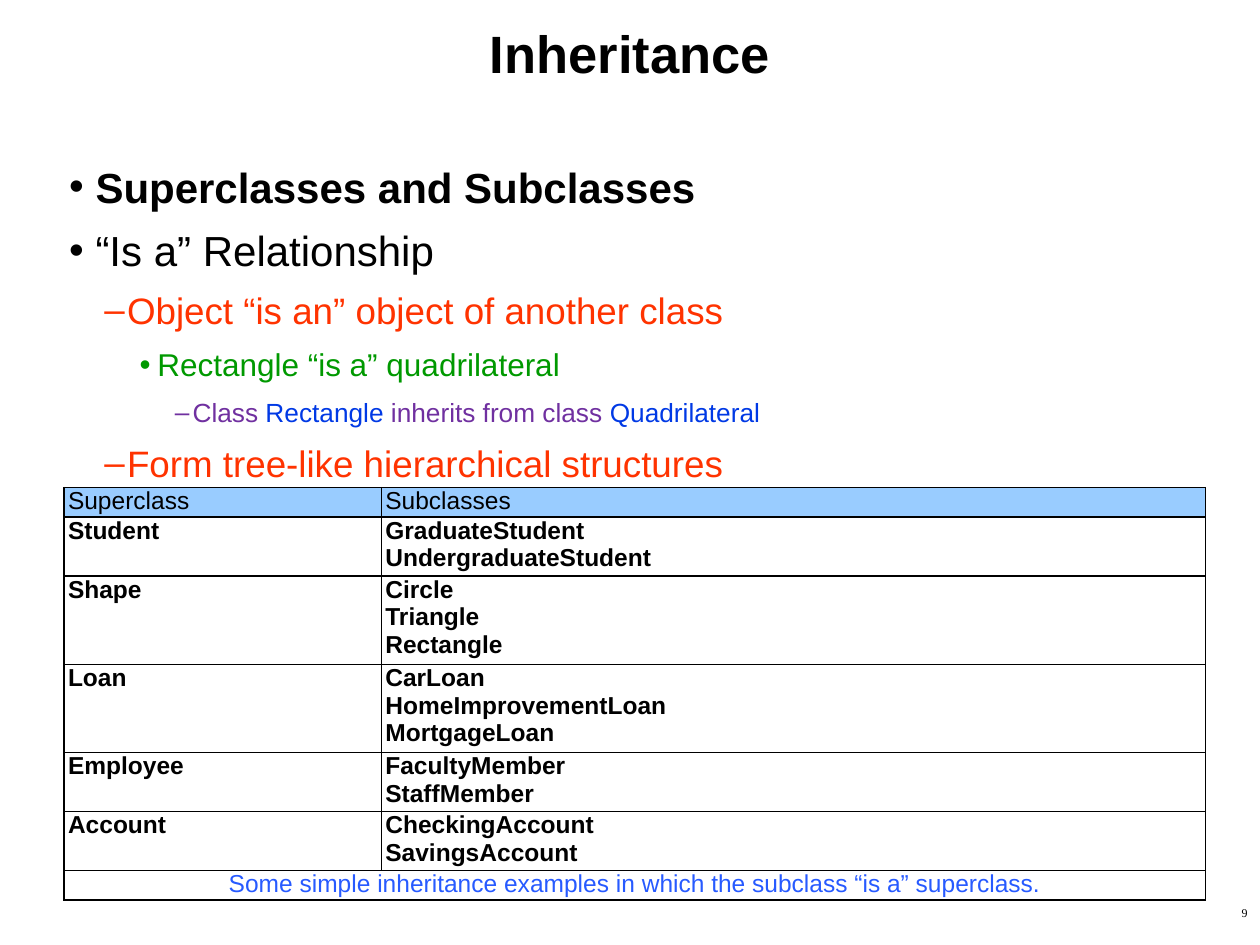
"""Build a slide on inheritance with an outline and a table of examples."""
from copy import deepcopy
from dataclasses import dataclass
from typing import Any

from lxml import etree
from pptx import Presentation
from pptx.dml.color import RGBColor
from pptx.enum.text import MSO_ANCHOR, PP_ALIGN
from pptx.oxml.ns import qn
from pptx.util import Inches, Pt

LEFT, CENTER, RIGHT = PP_ALIGN.LEFT, PP_ALIGN.CENTER, PP_ALIGN.RIGHT
TOP, MIDDLE = MSO_ANCHOR.TOP, MSO_ANCHOR.MIDDLE
BLACK = RGBColor(0x00, 0x00, 0x00)
ORANGE = RGBColor(0xFF, 0x33, 0x00)
GREEN = RGBColor(0x00, 0x99, 0x00)
PURPLE = RGBColor(0x70, 0x30, 0xA0)
BLUE = RGBColor(0x00, 0x39, 0xE5)
CAPTION_BLUE = RGBColor(0x27, 0x5A, 0xFF)
HEADER_BLUE = RGBColor(0x99, 0xCC, 0xFF)

SLIDE_WIDTH, SLIDE_HEIGHT = Inches(10), Inches(7.5)
LINE_HEIGHT = Inches(0.22)
CELL_INDENT = Inches(0.03)


@dataclass(frozen=True)
class Box:
    """A frame given as shares of the slide's size."""
    left: float
    top: float
    width: float
    height: float

    def lengths(self) -> tuple[int, int, int, int]:
        """Return left, top, width and height in slide units."""
        return (int(self.left * SLIDE_WIDTH), int(self.top * SLIDE_HEIGHT),
                int(self.width * SLIDE_WIDTH), int(self.height * SLIDE_HEIGHT))


@dataclass(frozen=True)
class Level:
    """The look of one outline level, with indents in inches."""
    bullet: str
    size: float
    margin: float
    hanging: float
    color: RGBColor


@dataclass(frozen=True)
class Point:
    """One outline line, made of words with an optional own colour."""
    level: int
    words: tuple[tuple[str, RGBColor | None], ...]
    bold: bool = False


TITLE_BOX = Box(0, 0, 1, 0.112)
OUTLINE_BOX = Box(0.045, 0.164, 0.915, 0.787)
TABLE_BOX = Box(0.051, 0.516, 0.906, 0.41)
NUMBER_BOX = Box(0.792, 0.952, 0.208, 0.048)
COLUMN_SHARES = (0.278, 0.722)

LEVELS = (
    Level("•", 24, 0.21, 0.21, BLACK),
    Level("–", 21, 0.46, 0.18, ORANGE),
    Level("•", 18, 0.7, 0.14, GREEN),
    Level("–", 15, 0.98, 0.14, PURPLE),
)
OUTLINE = (
    Point(0, (("Superclasses and Subclasses", None),), bold=True),
    Point(0, (("“Is a” Relationship", None),)),
    Point(1, (("Object “is an” object of another class", None),)),
    Point(2, (("Rectangle “is a” quadrilateral", None),)),
    Point(3, (("Class ", None), ("Rectangle", BLUE),
              (" inherits from class ", None), ("Quadrilateral", BLUE))),
    Point(1, (("Form tree-like hierarchical structures", None),)),
)
HEADER = ("Superclass", "Subclasses")
EXAMPLES = (
    ("Student", "GraduateStudent\nUndergraduateStudent"),
    ("Shape", "Circle\nTriangle\nRectangle"),
    ("Loan", "CarLoan\nHomeImprovementLoan\nMortgageLoan"),
    ("Employee", "FacultyMember\nStaffMember"),
    ("Account", "CheckingAccount\nSavingsAccount"),
)
CAPTION = "Some simple inheritance examples in which the subclass “is a” superclass."


def apply(target: Any, **values: Any) -> None:
    """Set each given attribute on the target."""
    for name, value in values.items():
        setattr(target, name, value)


def style(run: Any, size: float, color: RGBColor = BLACK, bold: bool = False,
          font: str = "Arial") -> None:
    """Give a run its font, size, weight and colour."""
    apply(run.font, name=font, size=Pt(size), bold=bold)
    run.font.color.rgb = color


def place(shape: Any, box: Box) -> None:
    """Move and size a shape to a box."""
    apply(shape, **dict(zip(("left", "top", "width", "height"), box.lengths())))


def add_title(slide: Any) -> None:
    """Fill and format the title placeholder."""
    title = slide.shapes.title
    place(title, TITLE_BOX)
    apply(title.text_frame, text="Inheritance", vertical_anchor=MIDDLE, word_wrap=True)
    heading = title.text_frame.paragraphs[0]
    heading.alignment = CENTER
    style(heading.runs[0], 30, bold=True)


def add_outline(slide: Any) -> None:
    """Draw the bulleted outline."""
    frame = slide.shapes.add_textbox(*OUTLINE_BOX.lengths()).text_frame
    frame.word_wrap = True
    for index, point in enumerate(OUTLINE):
        level = LEVELS[point.level]
        line = frame.add_paragraph() if index else frame.paragraphs[0]
        apply(line, level=point.level, alignment=LEFT,
              space_before=Pt(1.5), space_after=Pt(6))
        properties = line._p.get_or_add_pPr()
        properties.set("marL", str(Inches(level.margin)))
        properties.set("indent", str(-Inches(level.hanging)))
        etree.SubElement(properties, qn("a:buFont"), typeface="Arial")
        etree.SubElement(properties, qn("a:buChar"), char=level.bullet)
        for text, color in point.words:
            run = line.add_run()
            run.text = text
            style(run, level.size, color or level.color, point.bold)


def add_borders(cell: Any) -> None:
    """Draw a thin black line on each side of a cell."""
    properties = cell._tc.get_or_add_tcPr()
    for index, side in enumerate(("a:lnL", "a:lnR", "a:lnT", "a:lnB")):
        line = etree.Element(qn(side), w=str(Pt(1)))
        fill = etree.SubElement(line, qn("a:solidFill"))
        etree.SubElement(fill, qn("a:srgbClr"), val=str(BLACK))
        properties.insert(index, line)


def fill_cell(cell: Any, text: str, color: RGBColor = BLACK, bold: bool = False,
              background: RGBColor | None = None, alignment: Any = LEFT) -> None:
    """Write and format one table cell."""
    apply(cell, margin_left=0, margin_right=0, margin_top=0, margin_bottom=0,
          vertical_anchor=TOP)
    if background is None:
        cell.fill.background()
    else:
        cell.fill.solid()
        cell.fill.fore_color.rgb = background
    entry = cell.text_frame.paragraphs[0]
    apply(entry, text=text, alignment=alignment)
    if alignment == LEFT:
        entry._p.get_or_add_pPr().set("marL", str(CELL_INDENT))
    for run in entry.runs:
        style(run, 14, color, bold)
    for line_break in entry._p.findall(qn("a:br")):
        line_break.insert(0, deepcopy(entry.runs[0]._r.rPr))


def add_examples(slide: Any) -> None:
    """Draw the table of superclasses and their subclasses."""
    rows = (HEADER, *EXAMPLES, (CAPTION, ""))
    table = slide.shapes.add_table(len(rows), len(HEADER), *TABLE_BOX.lengths()).table
    apply(table, first_row=False, horz_banding=False)
    for column, share in zip(table.columns, COLUMN_SHARES):
        column.width = int(share * TABLE_BOX.width * SLIDE_WIDTH)
    last = len(rows) - 1
    table.cell(last, 0).merge(table.cell(last, 1))
    formats = {0: {"background": HEADER_BLUE},
               last: {"color": CAPTION_BLUE, "alignment": CENTER}}
    for row, texts in enumerate(rows):
        table.rows[row].height = LINE_HEIGHT * (texts[1].count("\n") + 1)
        for column, text in enumerate(texts):
            cell = table.cell(row, column)
            add_borders(cell)
            if not cell.is_spanned:
                fill_cell(cell, text, **formats.get(row, {"bold": True}))


def add_number(slide: Any) -> None:
    """Write the page number in the lower right corner."""
    frame = slide.shapes.add_textbox(*NUMBER_BOX.lengths()).text_frame
    apply(frame, text="9", word_wrap=True)
    number = frame.paragraphs[0]
    apply(number, alignment=RIGHT, space_before=Pt(3.4))
    style(number.runs[0], 6.8, font="Times New Roman")


def main() -> None:
    """Build and save the slide."""
    deck = Presentation()
    apply(deck, slide_width=SLIDE_WIDTH, slide_height=SLIDE_HEIGHT)
    slide = deck.slides.add_slide(deck.slide_layouts[5])
    for draw in (add_title, add_outline, add_number, add_examples):
        draw(slide)
    deck.save("out.pptx")


if __name__ == "__main__":
    main()
